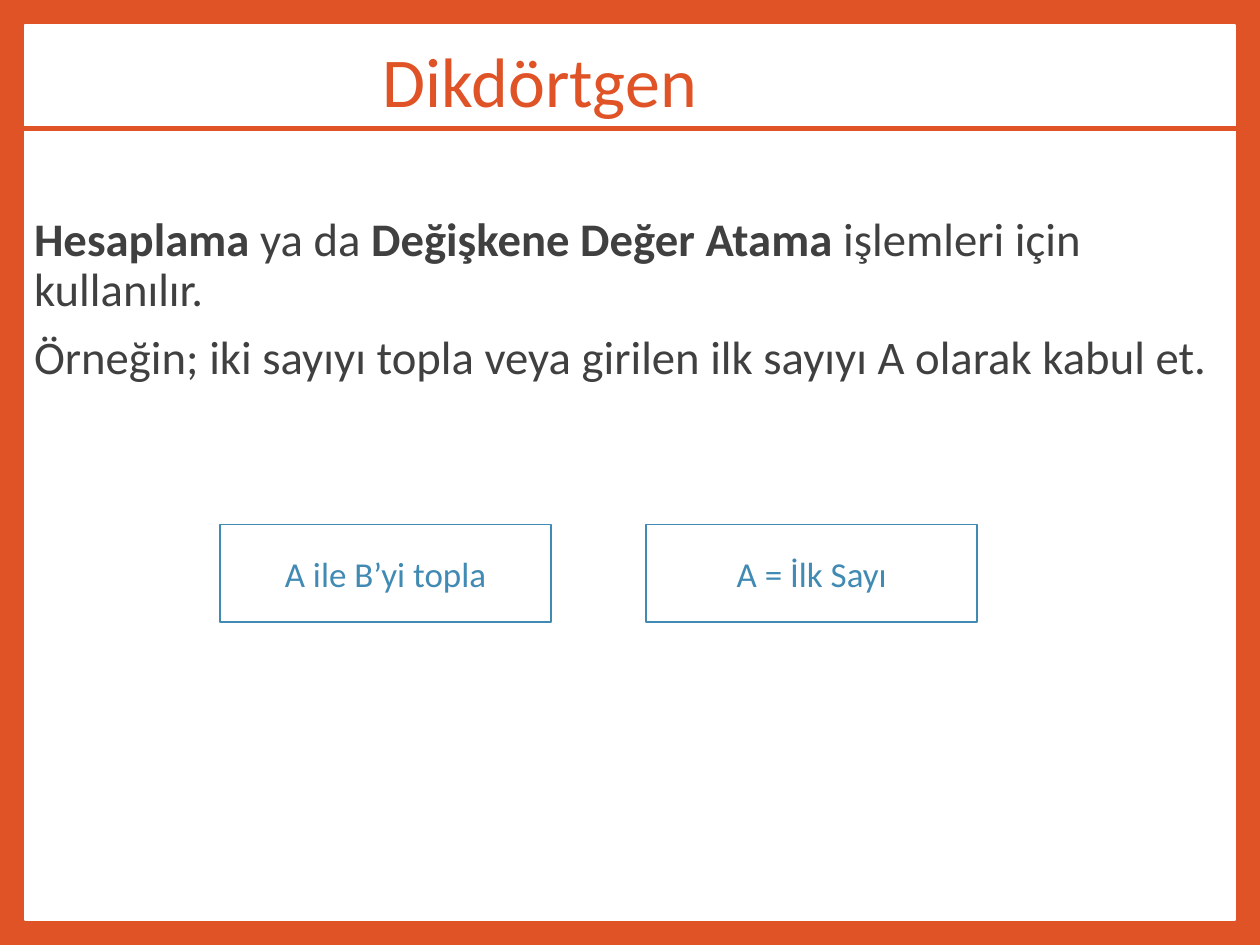
import pptx
import pptx.util
import pptx.dml.color
import pptx.enum.shapes
import pptx.enum.text
import pptx.oxml.ns
import lxml.etree
from dataclasses import dataclass

Pt = pptx.util.Pt
Align = pptx.enum.text.PP_ALIGN
Anchor = pptx.enum.text.MSO_ANCHOR


@dataclass(frozen=True)
class Theme:
    font: str = "Calibri"
    accent: str = "DF5327"
    paper: str = "FFFFFF"
    ink: str = "404040"
    blue: str = "418AB3"
    title: float = 30
    body: float = 20
    label: float = 15


THEME = Theme()


def rgb(code):
    return pptx.dml.color.RGBColor.from_string(code)


def write(shape, paras, size, color, align=Align.LEFT, anchor=Anchor.TOP,
          lead=1.0, before=0):
    """Fill a shape with paragraphs, each a list of (text, bold) runs."""
    frame = shape.text_frame
    frame.word_wrap = True
    frame.vertical_anchor = anchor
    frame.margin_left = frame.margin_right = Pt(5.4)
    frame.margin_top = frame.margin_bottom = Pt(2.7)
    for i, runs in enumerate(paras):
        para = frame.add_paragraph() if i else frame.paragraphs[0]
        para.alignment = align
        para.line_spacing = lead
        para.space_before = Pt(before)
        for text, bold in runs:
            run = para.add_run()
            run.text = text
            run.font.name = THEME.font
            run.font.size = Pt(size)
            run.font.bold = bold
            run.font.color.rgb = rgb(color)


def add_box(slide, box, line, width, fill=None):
    kind = pptx.enum.shapes.MSO_SHAPE.RECTANGLE
    shape = slide.shapes.add_shape(kind, *map(Pt, box))
    shape.shadow.inherit = False
    if fill:
        shape.fill.solid()
        shape.fill.fore_color.rgb = rgb(fill)
    else:
        shape.fill.background()
    shape.line.color.rgb = rgb(line)
    shape.line.width = Pt(width)
    return shape


def add_frame(slide, box):
    # Coloured border around a white page
    slide.background.fill.solid()
    slide.background.fill.fore_color.rgb = rgb(THEME.accent)
    add_box(slide, box, THEME.paper, 1, THEME.paper)


def add_title(slide, box, text):
    shape = slide.shapes.add_textbox(*map(Pt, box))
    write(shape, [[(text, False)]], THEME.title, THEME.accent,
          align=Align.CENTER, anchor=Anchor.MIDDLE, lead=0.9)


def add_rule(slide, box):
    left, top, width, height = box
    kind = pptx.enum.shapes.MSO_CONNECTOR.STRAIGHT
    rule = slide.shapes.add_connector(
        kind, Pt(left), Pt(top), Pt(left + width), Pt(top + height))
    rule.line.color.rgb = rgb(THEME.accent)
    rule.line.width = Pt(2.25)
    props = rule._element.spPr
    lxml.etree.SubElement(props, pptx.oxml.ns.qn("a:effectLst"))


def add_body(slide, box, paras):
    shape = slide.shapes.add_textbox(*map(Pt, box))
    write(shape, paras, THEME.body, THEME.ink, lead=0.9, before=7.5)


def add_steps(slide, box, labels, gap):
    # Equal process boxes in a row
    left, top, width, height = box
    wide = (width - gap * (len(labels) - 1)) / len(labels)
    for i, label in enumerate(labels):
        step = add_box(slide, (left + i * (wide + gap), top, wide, height),
                       THEME.blue, 0.75)
        write(step, [[(label, False)]], THEME.label, THEME.blue,
              align=Align.CENTER, anchor=Anchor.MIDDLE)


def main():
    deck = pptx.Presentation()
    deck.slide_width, deck.slide_height = Pt(540), Pt(405)
    slide = deck.slides.add_slide(deck.slide_layouts[6])

    add_frame(slide, (10.8, 10.8, 518.4, 383.6))
    add_title(slide, (9.2, 1.4, 444.4, 69.8), "Dikdörtgen")
    add_body(slide, (9.2, 90, 521.4, 69), [
        [("Hesaplama", True), (" ya da ", False),
         ("Değişkene Değer Atama", True),
         (" işlemleri için kullanılır.", False)],
        [("Örneğin; iki sayıyı topla veya girilen ilk sayıyı A olarak "
          "kabul et.", False)],
    ])
    add_rule(slide, (3.6, 55.2, 527, 0))
    add_steps(slide, (94.3, 224.8, 324.6, 41.8),
              ["A ile B’yi topla", "A = İlk Sayı"], 40.8)

    deck.save("out.pptx")


if __name__ == "__main__":
    main()
